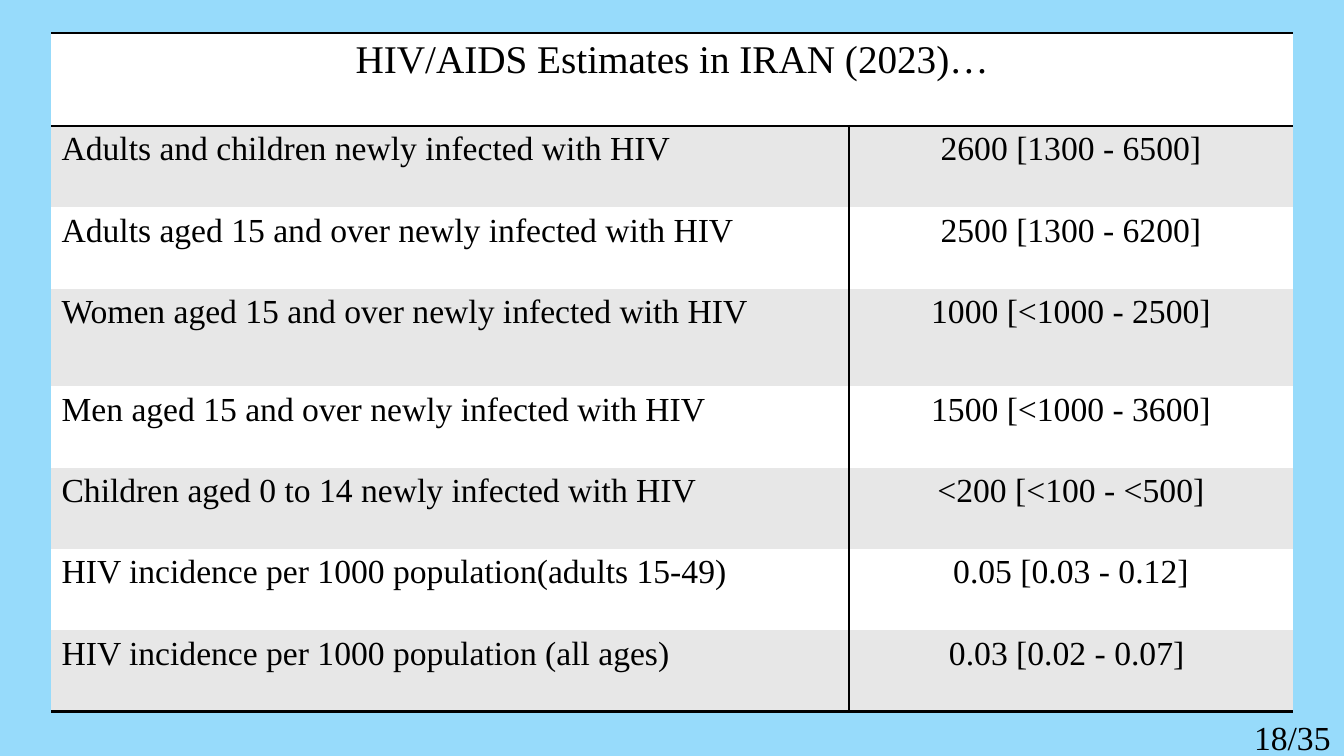
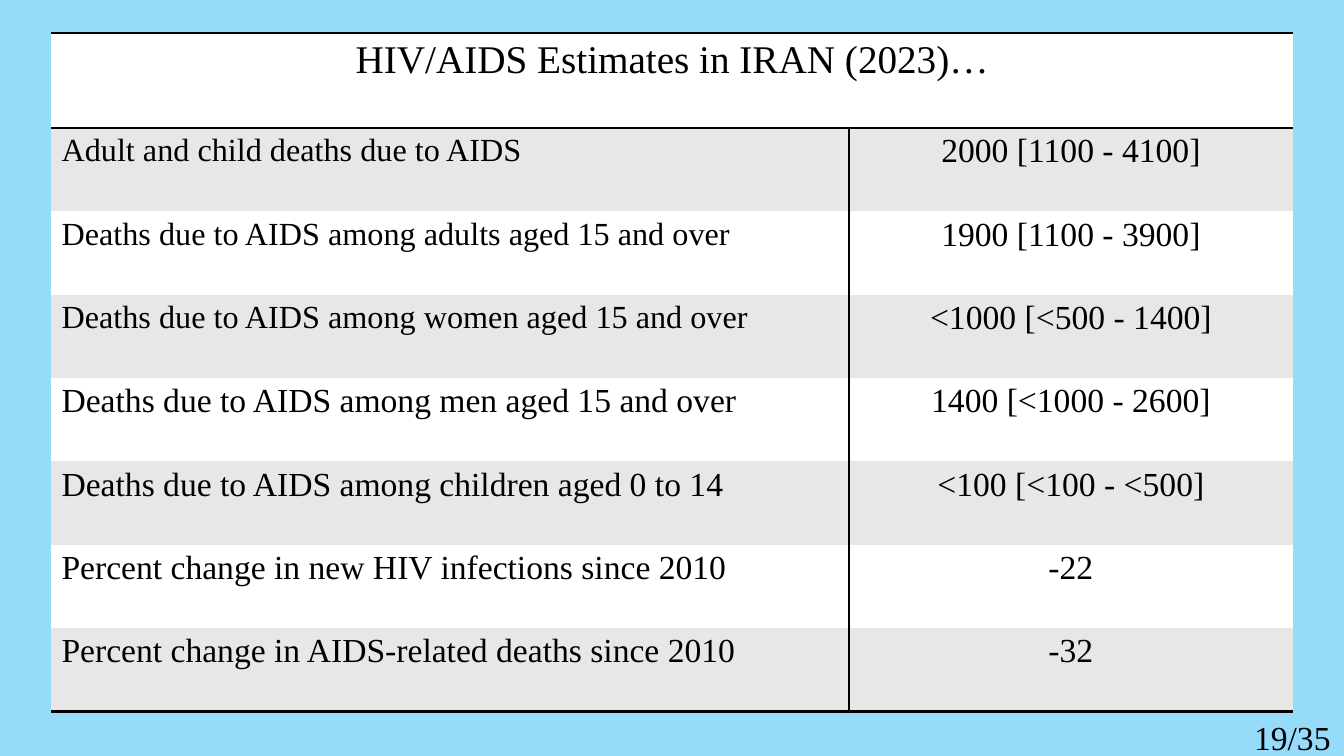
from pptx import Presentation, util as u
from pptx.dml.color import RGBColor
from pptx.enum import text
from pptx.oxml import ns
from lxml import etree

COLORS = {"sky": "97DBFB", "ink": "000000", "white": "FFFFFF", "grey": "E7E7E7"}
FONT = "Times New Roman"
NO_GRID_STYLE = "{2D5ABB26-0587-4C30-8999-92F81FD0307C}"
TITLE = "HIV/AIDS Estimates in IRAN (2023)…"
TOTAL_PAGES = 35

# Places in percent of the slide's width or height
TABLE_LEFT, TABLE_TOP, TABLE_HEIGHT = 3.83, 4.4, 89.73
COLUMN_WIDTHS = (59.34, 33.01)
NUMBER_BOX = (92.57, 94.13, 7.2, 6.67)


class EstimateDeck:
    """Holds the shared style and the current slide."""

    def __init__(self):
        self.deck = Presentation()
        self.deck.slide_width, self.deck.slide_height = u.Inches(13.33), u.Inches(7.5)
        self.page = None

    def across(self, percent):
        return round(self.deck.slide_width * percent / 100)

    def down(self, percent):
        return round(self.deck.slide_height * percent / 100)

    def color(self, name):
        return RGBColor.from_string(COLORS[name])

    def add_page(self):
        self.page = self.deck.slides.add_slide(self.deck.slide_layouts[6])
        fill = self.page.background.fill
        fill.solid()
        fill.fore_color.rgb = self.color("sky")

    def add_words(self, frame, words, size, centred=False):
        para = frame.paragraphs[0]
        para.alignment = text.PP_ALIGN.CENTER if centred else text.PP_ALIGN.LEFT
        span = para.add_run()
        span.text = words
        span.font.size, span.font.name = u.Pt(size), FONT
        span.font.color.rgb = self.color("ink")

    def style_cell(self, cell, fill, borders):
        """Borders map L, R, T, B to points; they must precede the fill."""
        properties = cell._tc.get_or_add_tcPr()
        for side in "LRTB":
            if side in borders:
                line = etree.SubElement(properties, ns.qn("a:ln" + side),
                                        w=str(u.Pt(borders[side])))
                solid = etree.SubElement(line, ns.qn("a:solidFill"))
                etree.SubElement(solid, ns.qn("a:srgbClr"), val=COLORS["ink"])
        cell.fill.solid()
        cell.fill.fore_color.rgb = self.color(fill)

    def add_estimates(self, rows, header_height, tall_rows):
        """Rows are (label, value, label size); tall_rows maps row to height."""
        shape = self.page.shapes.add_table(
            len(rows) + 1, 2, self.across(TABLE_LEFT), self.down(TABLE_TOP),
            self.across(sum(COLUMN_WIDTHS)), self.down(TABLE_HEIGHT))
        table = shape.table
        table._tbl.tblPr.find(ns.qn("a:tableStyleId")).text = NO_GRID_STYLE
        table.first_row = table.horz_banding = False
        for column, width in zip(table.columns, COLUMN_WIDTHS):
            column.width = self.across(width)

        # Rows without a set height share what is left
        heights = {0: header_height, **tall_rows}
        shared = (TABLE_HEIGHT - sum(heights.values())) / (len(rows) + 1 - len(heights))
        for index, row in enumerate(table.rows):
            row.height = self.down(heights.get(index, shared))

        # Header across both columns
        table.cell(0, 0).merge(table.cell(0, 1))
        for cell in table.rows[0].cells:
            self.style_cell(cell, "white", {"T": 2, "B": 2})
        self.add_words(table.cell(0, 0).text_frame, TITLE, 28, centred=True)

        # Banded body with a rule between the columns
        for index, (label, value, label_size) in enumerate(rows, 1):
            bottom = {"B": 2} if index == len(rows) else {}
            fill = "grey" if index % 2 else "white"
            name_cell, value_cell = table.cell(index, 0), table.cell(index, 1)
            self.style_cell(name_cell, fill, {"R": 1, **bottom})
            self.style_cell(value_cell, fill, {"L": 1, **bottom})
            self.add_words(name_cell.text_frame, label, label_size)
            self.add_words(value_cell.text_frame, value, 24, centred=True)

    def add_number(self, number):
        left, top, width, height = NUMBER_BOX
        box = self.page.shapes.add_textbox(self.across(left), self.down(top),
                                           self.across(width), self.down(height))
        box.text_frame.word_wrap = True
        box.text_frame.margin_right = 0
        self.add_words(box.text_frame, f"{number}/{TOTAL_PAGES}", 24)


NEW_INFECTIONS = [
    ("Adults and children newly infected with HIV", "2600 [1300 - 6500]", 24),
    ("Adults aged 15 and over newly infected with HIV", "2500 [1300 - 6200]", 24),
    ("Women aged 15 and over newly infected with HIV", "1000 [<1000 - 2500]", 24),
    ("Men aged 15 and over newly infected with HIV", "1500 [<1000 - 3600]", 24),
    ("Children aged 0 to 14 newly infected with HIV", "<200 [<100 - <500]", 24),
    ("HIV incidence per 1000 population(adults 15-49)", "0.05 [0.03 - 0.12]", 24),
    ("HIV incidence per 1000 population (all ages)", "0.03 [0.02 - 0.07] ", 24),
]
DEATHS = [
    ("Adult and child deaths due to AIDS", "2000 [1100 - 4100]", 23),
    ("Deaths due to AIDS among adults aged 15 and over", "1900 [1100 - 3900]", 23),
    ("Deaths due to AIDS among women aged 15 and over", "<1000 [<500 - 1400]", 23),
    ("Deaths due to AIDS among men aged 15 and over", "1400 [<1000 - 2600]", 24),
    ("Deaths due to AIDS among children aged 0 to 14", "<100 [<100 - <500]", 24),
    ("Percent change in new HIV infections since 2010", "-22", 24),
    ("Percent change in AIDS-related deaths since 2010", "-32", 24),
]
# Page number, rows, header height, heights of tall rows
PAGES = [
    (18, NEW_INFECTIONS, 12.27, {3: 12.93}),
    (19, DEATHS, 12.53, {}),
]


def main():
    show = EstimateDeck()
    for number, rows, header_height, tall_rows in PAGES:
        show.add_page()
        show.add_estimates(rows, header_height, tall_rows)
        show.add_number(number)
    show.deck.save("out.pptx")


if __name__ == "__main__":
    main()
